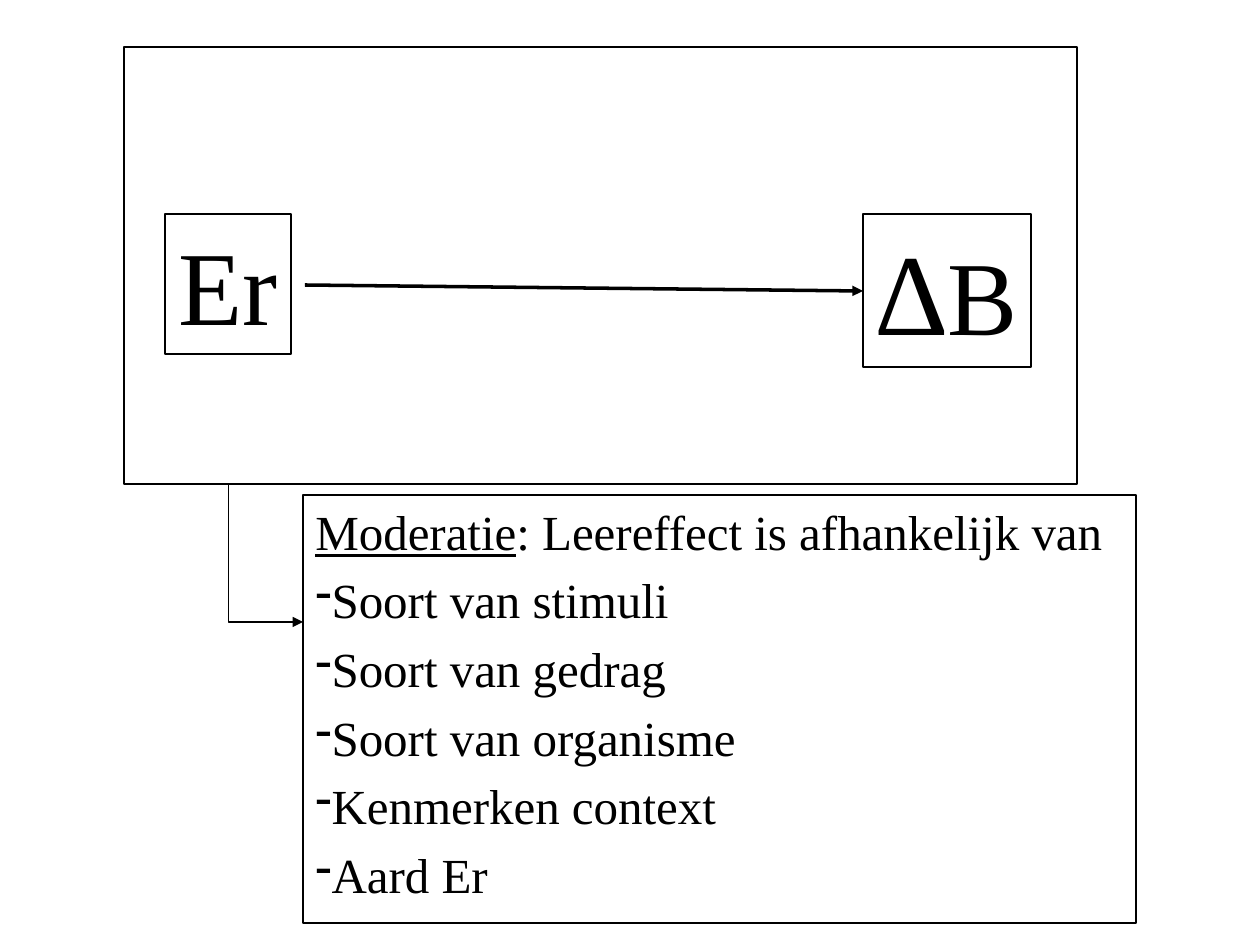
from lxml.etree import SubElement
from pptx import Presentation
from pptx.dml.color import RGBColor
from pptx.enum.shapes import MSO_CONNECTOR, MSO_SHAPE
from pptx.enum.text import MSO_ANCHOR, PP_ALIGN
from pptx.oxml.ns import qn
from pptx.util import Pt

PX = 914400 / 126
BLACK = RGBColor(0, 0, 0)
FONT = "Times New Roman"


def add_box(left, top, width, height):
    """Add an unfilled rectangle with a thin outline and return it."""
    box = slide.shapes.add_shape(
        MSO_SHAPE.RECTANGLE, *[round(n * PX) for n in (left, top, width, height)])
    box.shadow.inherit = False
    box.fill.background()
    box.line.color.rgb = BLACK
    box.line.width = Pt(0.75)
    box.text_frame.vertical_anchor = MSO_ANCHOR.TOP
    return box


def add_run(paragraph, text, size, underline=False):
    run = paragraph.add_run()
    run.text = text
    run.font.name = FONT
    run.font.size = Pt(size)
    run.font.color.rgb = BLACK
    run.font.underline = underline


presentation = Presentation()
presentation.slide_width = round(1260 * PX)
presentation.slide_height = round(945 * PX)
slide = presentation.slides.add_slide(presentation.slide_layouts[6])

# Cause and effect
for bounds, runs in [
    ((165, 214, 126, 140), [("Er", 60)]),
    ((863, 214, 168, 153), [("∆", 66), ("B", 60)]),
]:
    frame = add_box(*bounds).text_frame
    frame.word_wrap = False
    paragraph = frame.paragraphs[0]
    paragraph.alignment = PP_ALIGN.CENTER
    paragraph.space_before = Pt(6)
    for text, size in runs:
        add_run(paragraph, text, size)

add_box(124, 47, 953, 437)

# Arrows
for kind, ends, width in [
    (MSO_CONNECTOR.STRAIGHT, (305, 285, 863, 291), 2),
    (MSO_CONNECTOR.ELBOW, (154, 484, 303, 622), 0.75),
]:
    arrow = slide.shapes.add_connector(kind, *[round(n * PX) for n in ends])
    arrow.line.color.rgb = BLACK
    arrow.line.width = Pt(width)
    SubElement(arrow.line._get_or_add_ln(), qn("a:tailEnd"), type="triangle")
    SubElement(arrow._element.spPr, qn("a:effectLst"))

# Moderation list
frame = add_box(303, 495, 833, 428).text_frame
frame.word_wrap = True
heading = frame.paragraphs[0]
heading.alignment = PP_ALIGN.LEFT
heading.space_before = Pt(5.6)
add_run(heading, "Moderatie", 28, underline=True)
add_run(heading, ": Leereffect is afhankelijk van", 28)
for text in ["Soort van stimuli", "Soort van gedrag", "Soort van organisme",
             "Kenmerken context", "Aard Er"]:
    paragraph = frame.add_paragraph()
    paragraph.alignment = PP_ALIGN.LEFT
    paragraph.space_before = Pt(5.6)
    properties = paragraph._p.get_or_add_pPr()
    properties.set("marL", "0")
    properties.set("indent", "0")
    SubElement(properties, qn("a:buFontTx"))
    SubElement(properties, qn("a:buChar"), char="-")
    add_run(paragraph, text, 28)

presentation.save("out.pptx")
